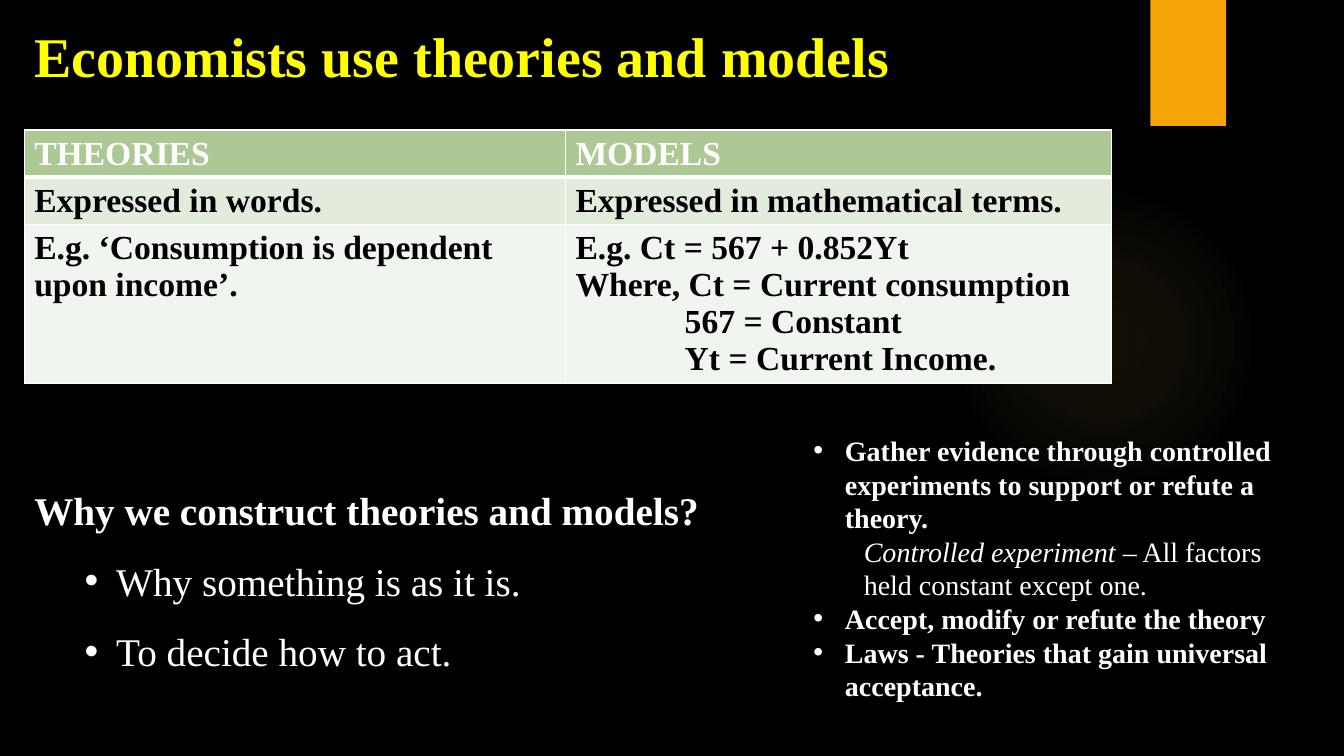
from dataclasses import dataclass

from lxml import etree
from pptx import Presentation
from pptx.dml.color import RGBColor as Rgb
from pptx.enum.shapes import MSO_SHAPE as Shape
from pptx.enum.text import MSO_ANCHOR as Anchor, MSO_AUTO_SIZE as AutoSize, PP_ALIGN as Align
from pptx.oxml import parse_xml
from pptx.oxml.ns import nsdecls, qn
from pptx.util import Pt


@dataclass(frozen=True)
class Theme:
    """Colours, typeface and type sizes of the slide."""
    font: str = "Times New Roman"
    black: str = "000000"
    white: str = "FFFFFF"
    yellow: str = "FFFF00"
    accent: str = "F5A408"
    glow: str = "FAC96A"
    rows: tuple = ("ACC995", "E3EBDD", "F1F5EF")
    title_size: int = 40
    table_size: int = 24
    reason_size: int = 28
    method_size: int = 20


THEME = Theme()
TABLE = [
    ("THEORIES", "MODELS"),
    ("Expressed in words.", "Expressed in mathematical terms."),
    ("E.g. ‘Consumption is dependent upon income’.",
     "E.g. Ct = 567 + 0.852Yt\nWhere, Ct = Current consumption\n567 = Constant\nYt = Current Income."),
]
FORMULA_INDENT = {"567 = Constant": 78, "Yt = Current Income.": 78}
REASONS = [
    ("Why we construct theories and models?", 0, True, 0, None),
    ("Why something is as it is.", 1, False, 58.5, "•"),
    ("To decide how to act.", 1, False, 58.5, "•"),
]
METHOD = [
    ("Gather evidence through controlled experiments to support or refute a theory.", 0, True, 22.5, "•"),
    ("Controlled experiment| – All factors held constant except one.", 1, False, 36, None),
    ("Accept, modify or refute the theory", 0, True, 22.5, "•"),
    ("Laws - Theories that gain universal acceptance.", 0, True, 22.5, "•"),
]


def style_font(font, size, color, bold):
    """Set typeface, size, colour and weight."""
    font.name, font.size, font.bold = THEME.font, Pt(size), bold
    font.color.rgb = Rgb.from_string(color)


def set_indent(para, left, bullet=None):
    """Set the left indent of a paragraph and its bullet, if any."""
    props = para._p.get_or_add_pPr()
    props.set("marL", str(Pt(left)))
    props.set("indent", str(Pt(-22.5 if bullet else 0)))
    mark = etree.SubElement(props, qn("a:buChar" if bullet else "a:buNone"))
    if bullet:
        mark.set("char", bullet)


def place(box, left, top, width, height, anchor):
    """Move a placeholder and fix its frame."""
    box.left, box.top, box.width, box.height = map(Pt, (left, top, width, height))
    frame = box.text_frame
    frame.word_wrap, frame.auto_size, frame.vertical_anchor = True, AutoSize.NONE, anchor
    return frame


def fill_title(box, text):
    """Write the slide title."""
    frame = place(box, 17.3, 15.1, 926, 48.2, Anchor.MIDDLE)
    frame.text = text
    para = frame.paragraphs[0]
    para.alignment = Align.LEFT
    style_font(para.runs[0].font, THEME.title_size, THEME.yellow, True)


def fill_list(box, bounds, items, size, spacing):
    """Write a list whose items may open with an italic term."""
    frame = place(box, *bounds, Anchor.TOP)
    frame.text = "\n".join(item[0].replace("|", "") for item in items)
    for para, (text, level, bold, left, bullet) in zip(frame.paragraphs, items):
        para.level, para.line_spacing, para.space_before = level, spacing, Pt(0)
        set_indent(para, left, bullet)
        parts = text.split("|")
        para.runs[0].text = parts[0]
        for part in parts[1:]:
            para.add_run().text = part
            para.runs[0].font.italic = True
        for span in para.runs:
            style_font(span.font, size, THEME.white, bold)


def add_backdrop(page, kind, left, top, width, height):
    """Add a shape without line or shadow behind everything else."""
    shape = page.shapes.add_shape(kind, *map(Pt, (left, top, width, height)))
    shape.shadow.inherit = False
    shape.line.fill.background()
    page.shapes._spTree.insert(2, shape._element)
    return shape


def add_glow(page):
    """Add the faint round glow."""
    props = add_backdrop(page, Shape.OVAL, 677.5, 131.8, 221.8, 221.8)._element.spPr
    stops = "".join(
        f'<a:gs pos="{place_at}000"><a:srgbClr val="{THEME.glow}"><a:alpha val="{alpha}000"/></a:srgbClr></a:gs>'
        for place_at, alpha in ((0, 7), (36, 6), (69, 0)))
    props.find(qn("a:prstGeom")).addnext(parse_xml(
        f'<a:gradFill {nsdecls("a")}><a:gsLst>{stops}</a:gsLst><a:path path="circle">'
        '<a:fillToRect l="50000" t="50000" r="50000" b="50000"/></a:path></a:gradFill>'))


def add_tab(page):
    """Add the accent tab at the top edge."""
    fill = add_backdrop(page, Shape.RECTANGLE, 821.8, 0, 54, 90).fill
    fill.solid()
    fill.fore_color.rgb = Rgb.from_string(THEME.accent)


def set_borders(cell, bottom):
    """Draw white borders round a cell."""
    props = cell._tc.get_or_add_tcPr()
    widths = {"lnL": 1, "lnR": 1, "lnT": 1, "lnB": bottom}
    for index, (side, width) in enumerate(widths.items()):
        props.insert(index, parse_xml(
            f'<a:{side} {nsdecls("a")} w="{Pt(width)}"><a:solidFill>'
            f'<a:srgbClr val="{THEME.white}"/></a:solidFill></a:{side}>'))


def add_comparison(page):
    """Add the table that sets theories against models."""
    table = page.shapes.add_table(3, 2, Pt(17.3), Pt(92.9), Pt(776.9), Pt(180.4)).table
    for column, width in zip(table.columns, (386.6, 390.3)):
        column.width = Pt(width)
    for index, (row, height) in enumerate(zip(table.rows, (33.4, 33.4, 113.6))):
        row.height = Pt(height)
        color = THEME.white if index == 0 else THEME.black
        for cell, text in zip(row.cells, TABLE[index]):
            cell.text = text
            cell.fill.solid()
            cell.fill.fore_color.rgb = Rgb.from_string(THEME.rows[index])
            set_borders(cell, 3 if index == 0 else 1)
            for para in cell.text_frame.paragraphs:
                set_indent(para, FORMULA_INDENT.get(para.text, 0))
                style_font(para.runs[0].font, THEME.table_size, color, True)


def main():
    """Build and save the slide."""
    deck = Presentation()
    deck.slide_width, deck.slide_height = Pt(960), Pt(540)
    page = deck.slides.add_slide(deck.slide_layouts[3])
    page.background.fill.solid()
    page.background.fill.fore_color.rgb = Rgb.from_string(THEME.black)
    title, reasons, method = list(page.placeholders)[:3]
    fill_title(title, "Economists use theories and models")
    fill_list(reasons, (17.3, 326.9, 501.8, 154.1), REASONS, THEME.reason_size, 1.5)
    fill_list(method, (573.8, 306, 369.4, 249.8), METHOD, THEME.method_size, 1)
    add_comparison(page)
    add_tab(page)
    add_glow(page)
    deck.save("out.pptx")


if __name__ == "__main__":
    main()
